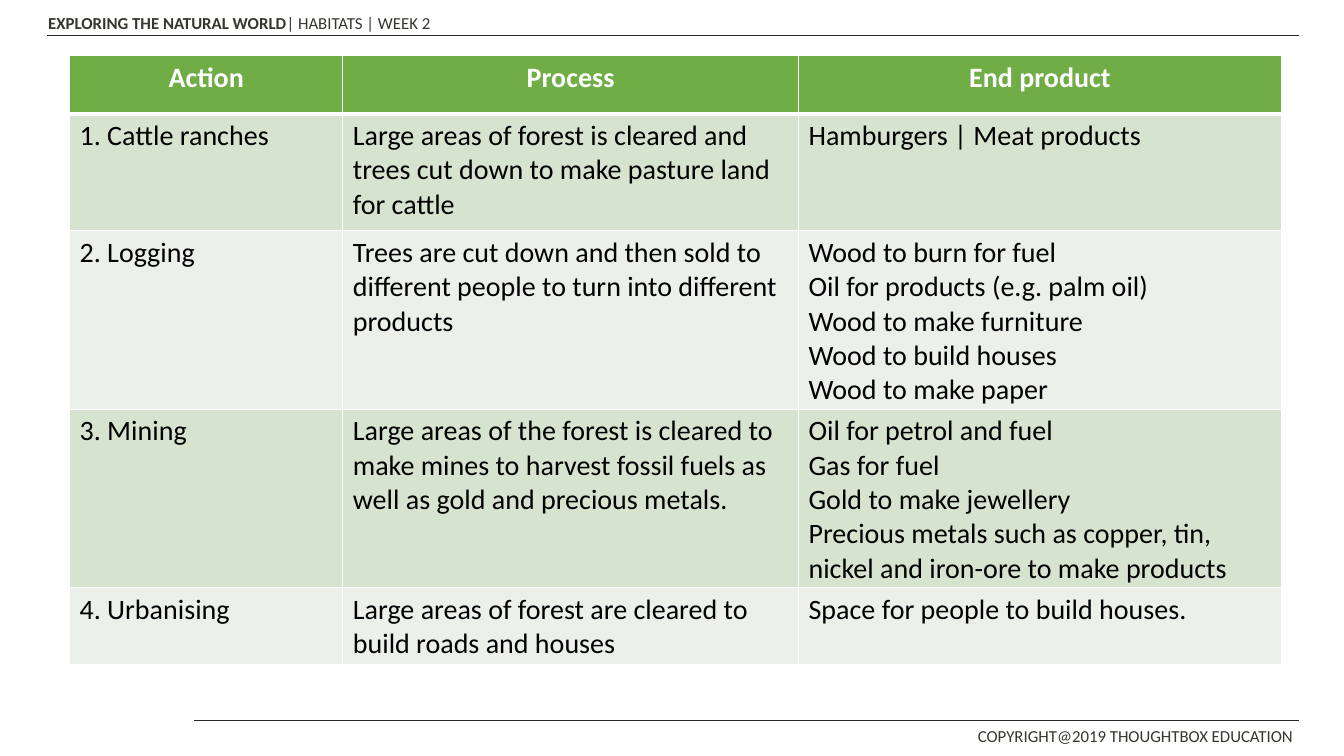
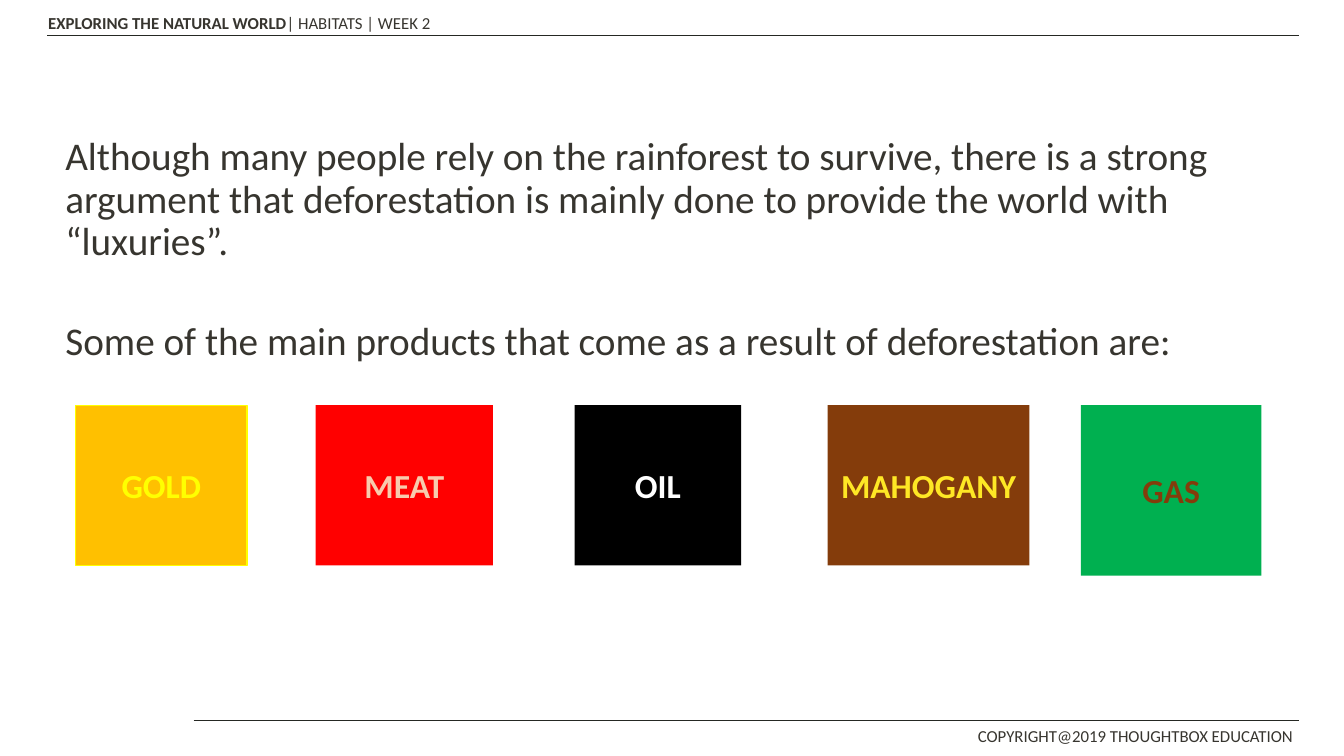
from lxml.etree import SubElement
from pptx import Presentation
from pptx.dml.color import RGBColor
from pptx.enum.shapes import MSO_CONNECTOR, MSO_SHAPE
from pptx.enum.text import MSO_ANCHOR, PP_ALIGN
from pptx.oxml.ns import qn
from pptx.util import Inches, Pt

FONT = "Calibri"
INK = RGBColor(0x37, 0x35, 0x2F)
RULE = RGBColor(0x25, 0x28, 0x23)
WHITE = RGBColor(0xFF, 0xFF, 0xFF)
BLACK = RGBColor(0x00, 0x00, 0x00)
GREEN = RGBColor(0x70, 0xAD, 0x47)
BAND_DARK = RGBColor(0xD5, 0xE3, 0xCF)
BAND_LIGHT = RGBColor(0xEB, 0xF1, 0xE9)
AMBER = RGBColor(0xFF, 0xC0, 0x00)
YELLOW = RGBColor(0xFF, 0xFF, 0x00)
RED = RGBColor(0xFF, 0x00, 0x00)
PEACH = RGBColor(0xF8, 0xCB, 0xAD)
BROWN = RGBColor(0x84, 0x3C, 0x0B)
LEMON = RGBColor(0xFE, 0xE7, 0x25)
EMERALD = RGBColor(0x00, 0xB0, 0x50)

COURSE, LESSON = "EXPLORING THE NATURAL WORLD", "| HABITATS | WEEK 2"
COPYRIGHT = "COPYRIGHT@2019 THOUGHTBOX EDUCATION"

COL_WIDTHS = (2.71, 4.52, 4.79)
ROW_HEIGHTS = (0.58, 1.16, 1.77, 1.77, 0.76)
ACTIONS = [
    ("Action", "Process", "End product"),
    ("1. Cattle ranches",
     "Large areas of forest is cleared and trees cut down to make pasture land for cattle",
     "Hamburgers | Meat products"),
    ("2. Logging",
     "Trees are cut down and then sold to different people to turn into different products",
     "Wood to burn for fuel\nOil for products (e.g. palm oil)\nWood to make furniture\n"
     "Wood to build houses\nWood to make paper"),
    ("3. Mining",
     "Large areas of the forest is cleared to make mines to harvest fossil fuels "
     "as well as gold and precious metals.",
     "Oil for petrol and fuel\nGas for fuel\nGold to make jewellery\n"
     "Precious metals such as copper, tin, nickel and iron-ore to make products"),
    ("4. Urbanising",
     "Large areas of forest are cleared to build roads and houses",
     "Space for people to build houses."),
]

LUXURIES = [
    "Although many people rely on the rainforest to survive, there is a strong argument "
    "that deforestation is mainly done to provide the world with “luxuries”.",
    "Some of the main products that come as a result of deforestation are:",
]
# name, left, width, height, fill, text colour, outline
PRODUCTS = [
    ("GOLD", 0.75, 1.7, 1.59, AMBER, YELLOW, YELLOW),
    ("MEAT", 3.13, 1.76, 1.59, RED, PEACH, None),
    ("OIL", 5.7, 1.65, 1.59, BLACK, WHITE, None),
    ("MAHOGANY", 8.21, 2, 1.59, BROWN, LEMON, None),
    ("GAS", 10.72, 1.79, 1.69, EMERALD, BROWN, None),
]


def style(p, size, color, bold=False):
    for r in p.runs:
        r.font.name = FONT
        r.font.size = Pt(size)
        r.font.bold = bold
        r.font.color.rgb = color


def add_text(s, x, y, w, h, text, size, wrap=True):
    tf = s.shapes.add_textbox(Inches(x), Inches(y), Inches(w), Inches(h)).text_frame
    tf.word_wrap = wrap
    tf.text = text
    for p in tf.paragraphs:
        style(p, size, INK)
    return tf


def add_rule(s, x1, x2, y):
    line = s.shapes.add_connector(
        MSO_CONNECTOR.STRAIGHT, Inches(x1), Inches(y), Inches(x2), Inches(y))
    line.line.color.rgb = RULE
    line.line.width = Pt(1)
    SubElement(line.element.spPr, qn("a:effectLst"))


def new_slide(prs):
    s = prs.slides.add_slide(prs.slide_layouts[6])
    p = add_text(s, 0.38, 0.08, 4.08, 0.3, COURSE, 12, wrap=False).paragraphs[0]
    p.add_run().text = LESSON
    style(p, 12, INK)
    p.runs[0].font.bold = True
    add_rule(s, 0.47, 12.88, 0.35)
    add_text(s, 9.6, 7.15, 3.4, 0.31, COPYRIGHT, 12)
    add_rule(s, 1.92, 12.88, 7.15)
    return s


def set_borders(cell, bottom, top):
    tcPr = cell._tc.get_or_add_tcPr()
    for side, width in (("L", 1), ("R", 1), ("T", top), ("B", bottom)):
        ln = SubElement(tcPr, qn(f"a:ln{side}"), w=str(Pt(width)))
        SubElement(SubElement(ln, qn("a:solidFill")), qn("a:srgbClr"), val=str(WHITE))


def add_actions(s):
    table = s.shapes.add_table(
        len(ACTIONS), len(COL_WIDTHS), Inches(0.69), Inches(0.55),
        Inches(sum(COL_WIDTHS)), Inches(sum(ROW_HEIGHTS))).table
    table.horz_banding = False
    for col, width in zip(table.columns, COL_WIDTHS):
        col.width = Inches(width)
    for i, (row, height) in enumerate(zip(table.rows, ROW_HEIGHTS)):
        row.height = Inches(height)
        header = i == 0
        fill = GREEN if header else (BAND_LIGHT, BAND_DARK)[i % 2]
        for cell, text in zip(row.cells, ACTIONS[i]):
            set_borders(cell, bottom=3 if header else 1, top=3 if i == 1 else 1)
            cell.fill.solid()
            cell.fill.fore_color.rgb = fill
            cell.text_frame.text = text
            for p in cell.text_frame.paragraphs:
                p.alignment = PP_ALIGN.CENTER if header else PP_ALIGN.LEFT
                style(p, 20, WHITE if header else BLACK, header)


def add_product(s, name, x, w, h, fill, color, outline):
    sp = s.shapes.add_shape(
        MSO_SHAPE.RECTANGLE, Inches(x), Inches(4.02), Inches(w), Inches(h))
    sp.shadow.inherit = False
    sp.fill.solid()
    sp.fill.fore_color.rgb = fill
    if outline is None:
        sp.line.fill.background()
    else:
        sp.line.color.rgb = outline
        sp.line.width = Pt(1)
    tf = sp.text_frame
    tf.text = name
    tf.vertical_anchor = MSO_ANCHOR.MIDDLE
    tf.paragraphs[0].alignment = PP_ALIGN.CENTER
    style(tf.paragraphs[0], 24, color, True)


def main():
    prs = Presentation()
    prs.slide_width, prs.slide_height = Inches(13.33), Inches(7.5)

    add_actions(new_slide(prs))

    s = new_slide(prs)
    tf = add_text(s, 0.55, 1.31, 12.4, 4.76, "\n".join(LUXURIES), 28)
    for p in tf.paragraphs:
        p.line_spacing = 0.9
    tf.paragraphs[1].space_before = Pt(41)
    for product in PRODUCTS:
        add_product(s, *product)

    prs.save("out.pptx")


if __name__ == "__main__":
    main()
